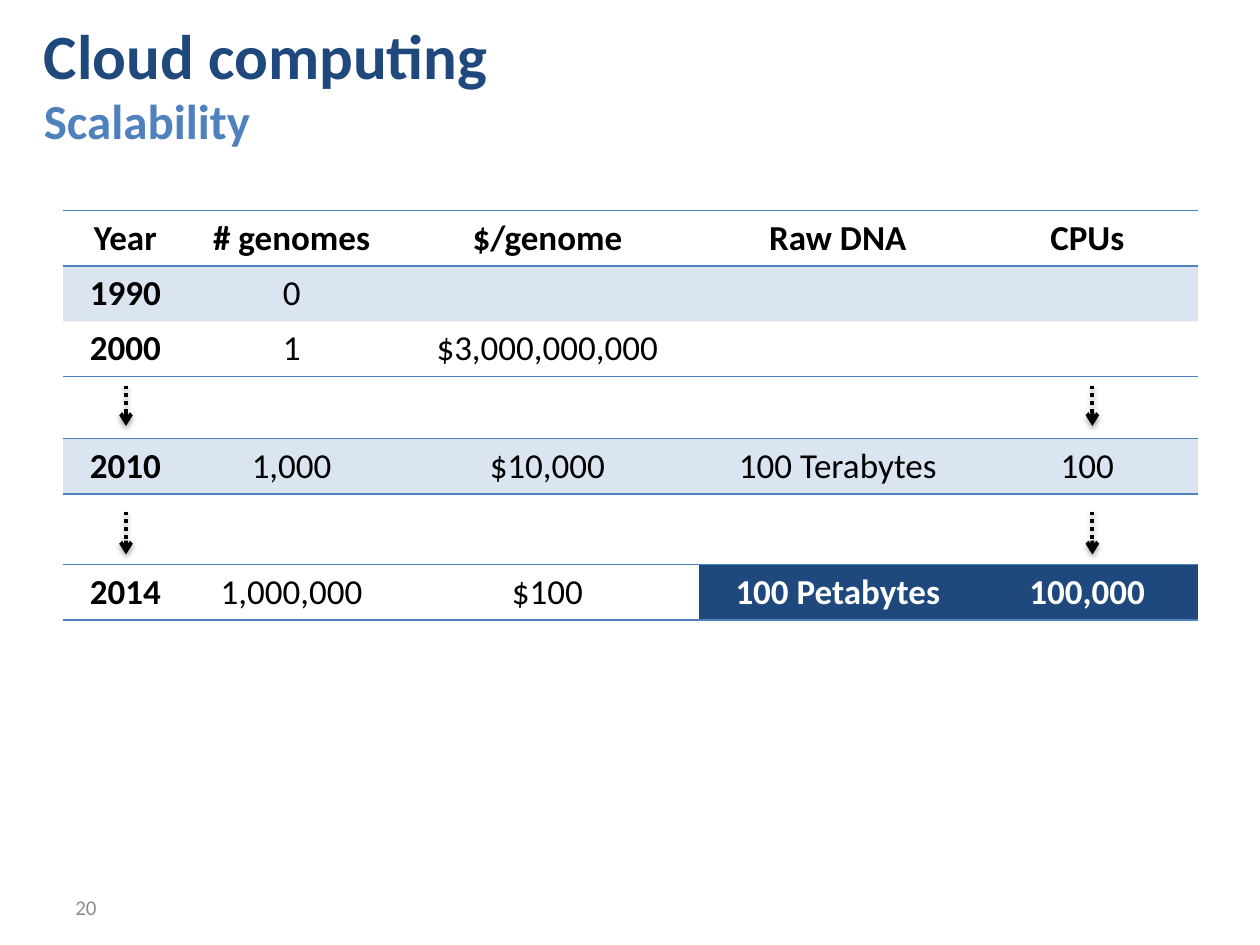
import pptx
import pptx.dml.color
import pptx.enum.shapes
import pptx.enum.text
import pptx.oxml
import pptx.oxml.ns
import pptx.util

Inches = pptx.util.Inches
Pt = pptx.util.Pt
RGBColor = pptx.dml.color.RGBColor

NAVY = RGBColor(0x1F, 0x49, 0x7D)
BLUE = RGBColor(0x4F, 0x81, 0xBD)
GRAY = RGBColor(0x8C, 0x8C, 0x8C)
BLACK = RGBColor(0, 0, 0)
WHITE = RGBColor(0xFF, 0xFF, 0xFF)

FONT = "Calibri"
LEFT = 0.5
WIDTHS = (0.99, 1.65, 2.41, 2.2, 1.76)
HEIGHT = 0.44
PLAIN = "{2D5ABB26-0587-4C30-8999-92F81FD0307C}"

EARLY = [
    ("Year", "# genomes", "$/genome", "Raw DNA", "CPUs"),
    ("1990", "0", "", "", ""),
    ("2000", "1", "$3,000,000,000", "", ""),
]
MIDDLE = [("2010", "1,000", "$10,000", "100 Terabytes", "100")]
LATE = [("2014", "1,000,000", "$100", "100 Petabytes", "100,000")]


def make(xml):
    return pptx.oxml.parse_xml(f"<a:root {pptx.oxml.ns.nsdecls('a')}>{xml}</a:root>")[0]


def style(para, size, color, bold=False):
    for run in para.runs:
        font = run.font
        font.name, font.size, font.bold = FONT, Pt(size), bold
        font.color.rgb = color


def add_text(slide, text, box, size, color, bold=False, middle=False):
    frame = slide.shapes.add_textbox(*map(Inches, box)).text_frame
    frame.word_wrap = True
    if middle:
        frame.vertical_anchor = pptx.enum.text.MSO_ANCHOR.MIDDLE
    frame.text = text
    style(frame.paragraphs[0], size, color, bold)


def set_edges(cell, ruled):
    props = cell._tc.get_or_add_tcPr()
    for place, side in enumerate("LRTB"):
        if side in ruled:
            paint = f'<a:solidFill><a:srgbClr val="{BLUE}"/></a:solidFill>'
        else:
            paint = "<a:noFill/>"
        props.insert(place, make(f'<a:ln{side} w="12700">{paint}</a:ln{side}>'))


def set_fill(cell, color, alpha=None):
    cell.fill.solid()
    cell.fill.fore_color.rgb = color
    if alpha:
        tone = cell._tc.tcPr.find(".//" + pptx.oxml.ns.qn("a:srgbClr"))
        tone.append(make(f'<a:alpha val="{alpha * 1000}"/>'))


def add_grid(slide, top, rows, edges, tinted=(), dark=()):
    size = map(Inches, (LEFT, top, sum(WIDTHS), HEIGHT * len(rows)))
    frame = slide.shapes.add_table(len(rows), len(WIDTHS), *size)
    table = frame.table
    table.first_row = table.horz_banding = False
    table._tbl.tblPr.find(pptx.oxml.ns.qn("a:tableStyleId")).text = PLAIN
    for column, width in zip(table.columns, WIDTHS):
        column.width = Inches(width)
    for r, row in enumerate(rows):
        table.rows[r].height = Inches(HEIGHT)
        for c, text in enumerate(row):
            cell = table.cell(r, c)
            if c == 1:
                cell.margin_left = cell.margin_right = 0
            cell.text = text
            para = cell.text_frame.paragraphs[0]
            para.alignment = pptx.enum.text.PP_ALIGN.CENTER
            head = c == 0 or row[0] == "Year"
            style(para, 20, WHITE if c in dark else BLACK, head or c in dark)
            if c in dark:
                set_fill(cell, NAVY)
            elif r in tinted:
                set_fill(cell, BLUE, 20)
            else:
                cell.fill.background()
            set_edges(cell, edges[r])


def add_arrow(slide, x, top, end):
    kind = pptx.enum.shapes.MSO_CONNECTOR.STRAIGHT
    arrow = slide.shapes.add_connector(kind, *map(Inches, (x, top, x, end)))
    arrow.line.color.rgb = BLACK
    arrow.line.width = Pt(2.25)
    props = arrow._element.spPr
    line = props.find(pptx.oxml.ns.qn("a:ln"))
    line.append(make('<a:prstDash val="sysDot"/>'))
    line.append(make('<a:tailEnd type="arrow"/>'))
    props.append(make(
        f'<a:effectLst><a:outerShdw blurRad="{Pt(3.1)}" dist="{Pt(1.8)}" dir="5400000" '
        'rotWithShape="0"><a:srgbClr val="000000"><a:alpha val="35000"/></a:srgbClr>'
        "</a:outerShdw></a:effectLst>"))


def main():
    """Build the slide on how genome data and computing grow."""
    deck = pptx.Presentation()
    deck.slide_width, deck.slide_height = Inches(10), Inches(7.5)
    slide = deck.slides.add_slide(deck.slide_layouts[6])
    add_text(slide, "Cloud computing", (0.25, 0.08, 9.5, 0.67), 36, NAVY, True)
    add_text(slide, "Scalability", (0.25, 0.67, 9.5, 0.58), 28, BLUE, True)
    add_text(slide, "20", (0.5, 7, 2.33, 0.4), 12, GRAY, middle=True)
    add_grid(slide, 1.67, EARLY, ("TB", "T", "B"), tinted=(1,))
    add_grid(slide, 3.48, MIDDLE, ("TB",), tinted=(0,))
    add_grid(slide, 4.48, LATE, ("TB",), dark=(3, 4))
    for x in (1, 8.67):
        add_arrow(slide, x, 3.06, 3.38)
        add_arrow(slide, x, 4.06, 4.4)
    deck.save("out.pptx")


if __name__ == "__main__":
    main()
